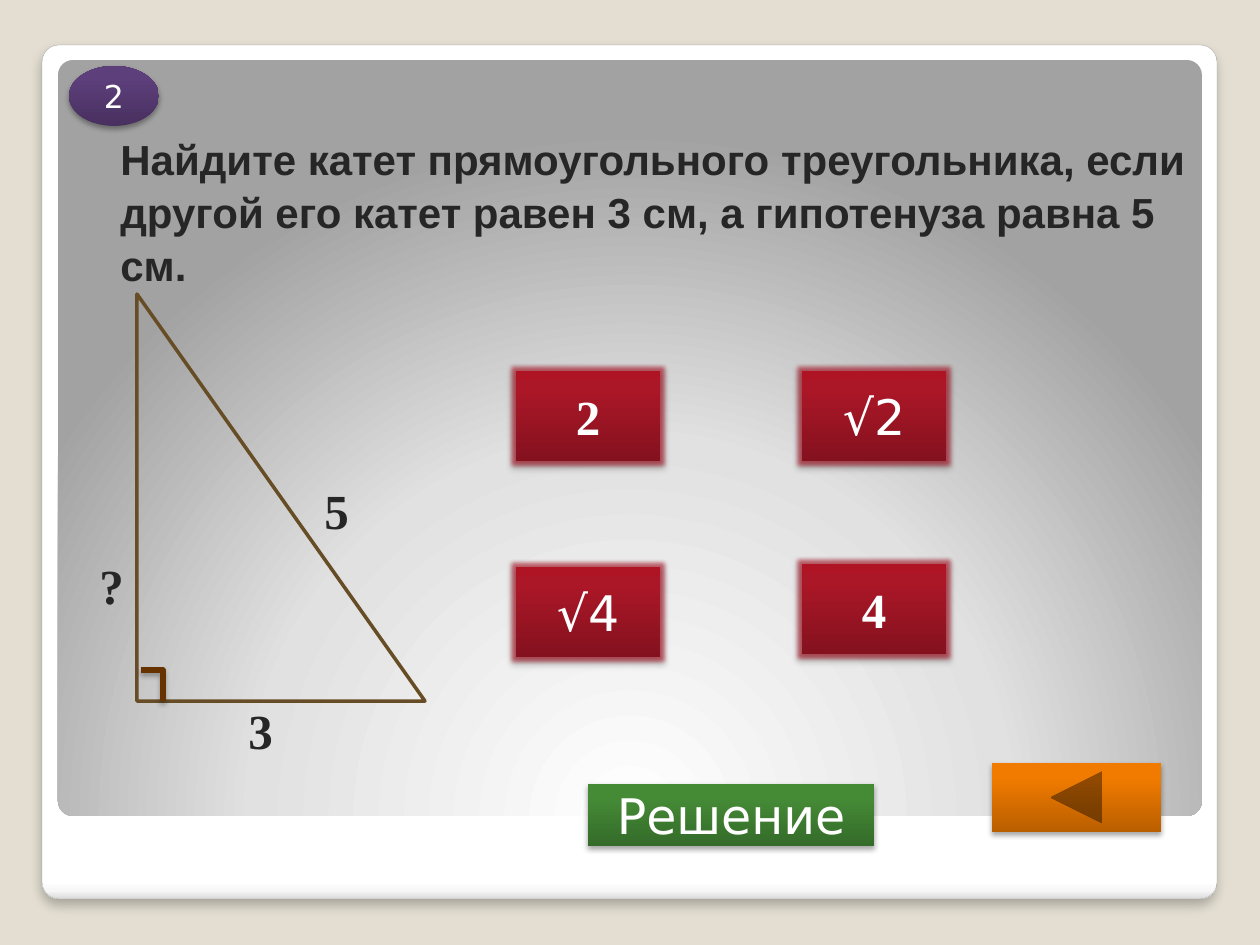
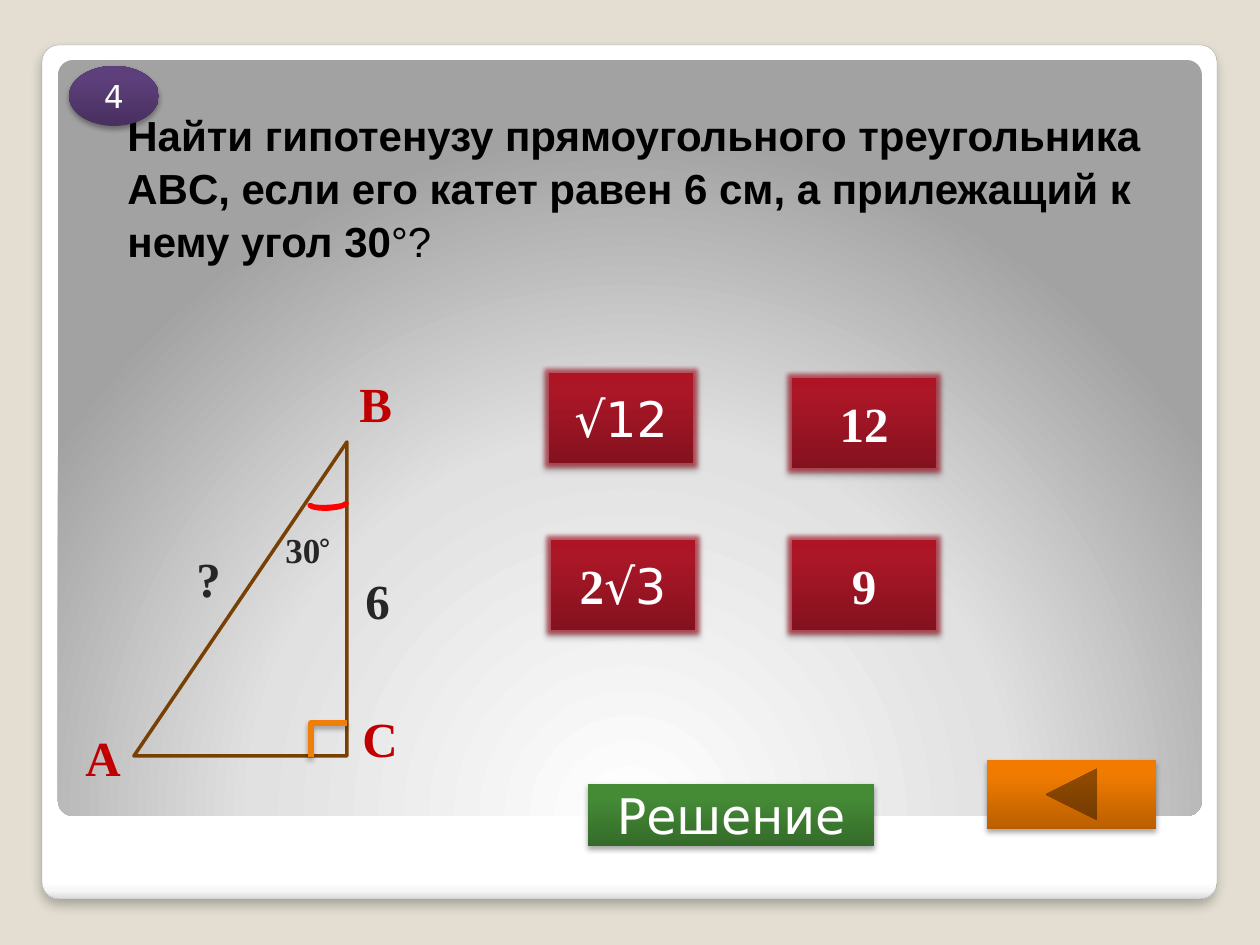
from dataclasses import dataclass

from lxml.etree import SubElement
from pptx import Presentation
from pptx.dml.color import RGBColor
from pptx.enum.shapes import MSO_SHAPE
from pptx.enum.text import MSO_ANCHOR, MSO_AUTO_SIZE, PP_ALIGN
from pptx.oxml.ns import qn
from pptx.util import Emu, Pt

PX = 914400 / 126


def px(length):
    return Emu(round(length * PX))


@dataclass(frozen=True)
class Type:
    font: str
    size: int
    color: str
    bold: bool = False


@dataclass(frozen=True)
class Shadow:
    alpha: int
    blur: float
    distance: float


class Theme:
    background = "E3DED1"
    frame_line = "A4A4A4"
    arc_fill, arc_line = "F07F09", "FF0000"

    frame_fill = [(0, "FFFFFF"), (98, "FFFFFF"), (99, "F7F7F7"), (100, "DADADA")]
    panel_fill = [(0, "FFFFFF"), (55, "E1E1E1"), (100, "A2A2A2")]
    answer_fill = [(0, "84111E"), (80, "AB1727"), (100, "AF1425")]
    back_fill = [(0, "BA5F00"), (80, "F17B00"), (100, "F27C00")]
    badge_fill = [(0, "48305F"), (80, "5D3F7B"), (100, "5D3E7D")]
    solution_fill = [(0, "356B2A"), (80, "458B36"), (100, "458D35")]
    answer_glow = "AF1425"

    frame_shadow = Shadow(25, 6, 4)
    raised_shadow = Shadow(35, 3.1, 1.8)

    dark_title = Type("Arial", 24, "262626", True)
    black_title = Type("Arial", 24, "000000", True)
    black_title_sign = Type("Arial", 24, "000000")
    side = Type("Times New Roman", 28, "262626", True)
    vertex = Type("Times New Roman", 28, "C00000", True)
    angle = Type("Times New Roman", 20, "262626", True)
    angle_sign = Type("Comic Neue", 20, "262626")
    number = Type("Times New Roman", 28, "FFFFFF", True)
    root = Type("DejaVu Sans", 28, "FFFFFF")
    badge = Type("DejaVu Sans", 18, "FFFFFF")


class QuizDeck:
    def __init__(self, theme):
        self.theme = theme
        self.deck = Presentation()
        self.deck.slide_width, self.deck.slide_height = px(1260), px(945)
        self.slide = None

    def start_slide(self):
        """Add a slide with the shared background, frame and panel."""
        theme = self.theme
        self.slide = self.deck.slides.add_slide(self.deck.slide_layouts[6])
        backdrop = self.slide.background.fill
        backdrop.solid()
        backdrop.fore_color.rgb = RGBColor.from_string(theme.background)
        frame = self.shape(MSO_SHAPE.ROUNDED_RECTANGLE, (42, 45, 1175, 854))
        panel = self.shape(MSO_SHAPE.ROUNDED_RECTANGLE, (58, 60, 1144, 756))
        for card in (frame, panel):
            card.adjustments[0] = 0.02
        self.gradient(frame, theme.frame_fill, 90)
        self.outline(frame, theme.frame_line, 0.16)
        self.effects(frame, theme.frame_shadow)
        self.gradient(panel, theme.panel_fill)

    def shape(self, preset, box):
        """Add a preset shape with no fill, line or shadow."""
        shape = self.slide.shapes.add_shape(preset, *map(px, box))
        shape.shadow.inherit = False
        shape.fill.background()
        shape.line.fill.background()
        return shape

    def outline(self, shape, color, width):
        shape.line.color.rgb = RGBColor.from_string(color)
        shape.line.width = Pt(width)

    def gradient(self, shape, stops, angle=None):
        """Fill along an angle, or in rings rising from below when there is none."""
        shape.fill.gradient()
        fill = shape._element.spPr.find(qn("a:gradFill"))
        for child in list(fill):
            fill.remove(child)
        stop_list = SubElement(fill, qn("a:gsLst"))
        for position, color in stops:
            stop = SubElement(stop_list, qn("a:gs"), pos=str(position * 1000))
            SubElement(stop, qn("a:srgbClr"), val=color)
        if angle is None:
            rings = SubElement(fill, qn("a:path"), {"path": "circle"})
            SubElement(rings, qn("a:fillToRect"),
                       l="50000", t="175000", r="50000", b="-75000")
        else:
            SubElement(fill, qn("a:lin"), ang=str(angle * 60000), scaled="0")

    def effects(self, shape, shadow, glow=None):
        effect_list = shape._element.spPr.find(qn("a:effectLst"))

        def tint(effect, color, alpha):
            shade = SubElement(effect, qn("a:srgbClr"), val=color)
            SubElement(shade, qn("a:alpha"), val=str(alpha * 1000))

        if glow:
            halo = SubElement(effect_list, qn("a:glow"), rad=str(Pt(5)))
            tint(halo, glow, 60)
        cast = SubElement(effect_list, qn("a:outerShdw"), blurRad=str(Pt(shadow.blur)),
                          dist=str(Pt(shadow.distance)), dir="5400000", rotWithShape="0")
        tint(cast, "000000", shadow.alpha)

    def add_runs(self, frame, runs, align=PP_ALIGN.LEFT):
        paragraph = frame.paragraphs[0]
        paragraph.alignment = align
        for words, style in runs:
            run = paragraph.add_run()
            run.text = words
            run.font.name = style.font
            run.font.size = Pt(style.size)
            run.font.bold = style.bold
            run.font.color.rgb = RGBColor.from_string(style.color)
        return paragraph

    def title(self, box, *runs):
        frame = self.slide.shapes.add_textbox(*map(px, box)).text_frame
        frame.word_wrap = True
        frame.vertical_anchor = MSO_ANCHOR.BOTTOM
        self.add_runs(frame, runs).line_spacing = 1.05

    def label(self, left, top, *runs, width=50, height=72):
        frame = self.slide.shapes.add_textbox(*map(px, (left, top, width, height))).text_frame
        frame.word_wrap = False
        frame.auto_size = MSO_AUTO_SIZE.SHAPE_TO_FIT_TEXT
        self.add_runs(frame, runs)

    def raised(self, preset, box, stops, *runs, glow=None):
        """Add a shaded shape with a shadow and centred text."""
        shape = self.shape(preset, box)
        self.gradient(shape, stops, 270)
        self.effects(shape, self.theme.raised_shadow, glow)
        if runs:
            frame = shape.text_frame
            frame.word_wrap = False
            frame.vertical_anchor = MSO_ANCHOR.MIDDLE
            self.add_runs(frame, runs, PP_ALIGN.CENTER)

    def badge(self, number):
        self.raised(MSO_SHAPE.OVAL, (69, 66, 90, 60), self.theme.badge_fill,
                    (number, self.theme.badge))

    def answer(self, left, top, *runs):
        self.raised(MSO_SHAPE.ACTION_BUTTON_CUSTOM, (left, top, 144, 90),
                    self.theme.answer_fill, *runs, glow=self.theme.answer_glow)

    def navigation(self, back_left, back_top):
        self.raised(MSO_SHAPE.ACTION_BUTTON_BACK_OR_PREVIOUS,
                    (back_left, back_top, 169, 69), self.theme.back_fill)
        self.raised(MSO_SHAPE.ACTION_BUTTON_CUSTOM, (588, 784, 286, 62),
                    self.theme.solution_fill, ("Решение", self.theme.root))

    def triangle(self, box, color, mirrored=False):
        triangle = self.shape(MSO_SHAPE.RIGHT_TRIANGLE, box)
        self.outline(triangle, color, 2)
        if mirrored:
            triangle._element.spPr.find(qn("a:xfrm")).set("flipH", "1")

    def right_angle(self, corners, color):
        start, *rest = [(px(x), px(y)) for x, y in corners]
        builder = self.slide.shapes.build_freeform(*start)
        builder.add_line_segments(rest, close=False)
        mark = builder.convert_to_shape()
        mark.shadow.inherit = False
        mark.fill.background()
        self.outline(mark, color, 3)
        self.effects(mark, self.theme.raised_shadow)

    def angle_arc(self, box, rotation):
        arc = self.shape(MSO_SHAPE.BLOCK_ARC, box)
        arc.rotation = rotation
        arc.fill.solid()
        arc.fill.fore_color.rgb = RGBColor.from_string(self.theme.arc_fill)
        self.outline(arc, self.theme.arc_line, 2)


def leg_question(quiz):
    theme = quiz.theme
    quiz.start_slide()
    quiz.title((108, 129, 1134, 167),
               ("Найдите катет прямоугольного треугольника, если другой его катет "
                "равен 3 см, а гипотенуза равна 5 см.", theme.dark_title))
    quiz.triangle((137, 294, 288, 407), "674D26")
    for left, top, length in ((87, 549, "?"), (236, 694, "3"), (312, 474, "5")):
        quiz.label(left, top, (length, theme.side))
    quiz.answer(516, 371, ("2", theme.number))
    quiz.answer(516, 567, ("√4", theme.root))
    quiz.answer(802, 371, ("√2", theme.root))
    quiz.answer(802, 564, ("4", theme.number))
    quiz.badge("2")
    quiz.right_angle([(141, 670), (163, 670), (163, 701)], "663300")
    quiz.navigation(992, 763)


def hypotenuse_question(quiz):
    theme = quiz.theme
    quiz.start_slide()
    quiz.title((115, 127, 1128, 145),
               ("Найти гипотенузу прямоугольного треугольника ABC, если его катет "
                "равен 6 см, а прилежащий к нему угол 30", theme.black_title),
               ("°?", theme.black_title_sign))
    quiz.badge("4")
    quiz.triangle((134, 442, 213, 314), "784004", mirrored=True)
    for left, top, length in ((184, 542, "?"), (353, 564, "6")):
        quiz.label(left, top, (length, theme.side))
    for left, top, vertex in ((73, 721, "А"), (350, 702, "С"), (347, 367, "В")):
        quiz.label(left, top, (vertex, theme.vertex), width=62)
    quiz.label(273, 522, ("30", theme.angle), ("°", theme.angle_sign), width=76, height=55)
    quiz.angle_arc((309, 499, 38, 10), 177.1)
    quiz.answer(549, 373, ("√12", theme.root))
    quiz.answer(792, 540, ("9", theme.number))
    quiz.answer(792, 378, ("12", theme.number))
    quiz.answer(551, 540, ("2", theme.number), ("√3", theme.root))
    quiz.right_angle([(311, 757), (311, 723), (347, 723)], "F07F09")
    quiz.navigation(987, 760)


def main():
    quiz = QuizDeck(Theme())
    leg_question(quiz)
    hypotenuse_question(quiz)
    quiz.deck.save("out.pptx")


if __name__ == "__main__":
    main()
